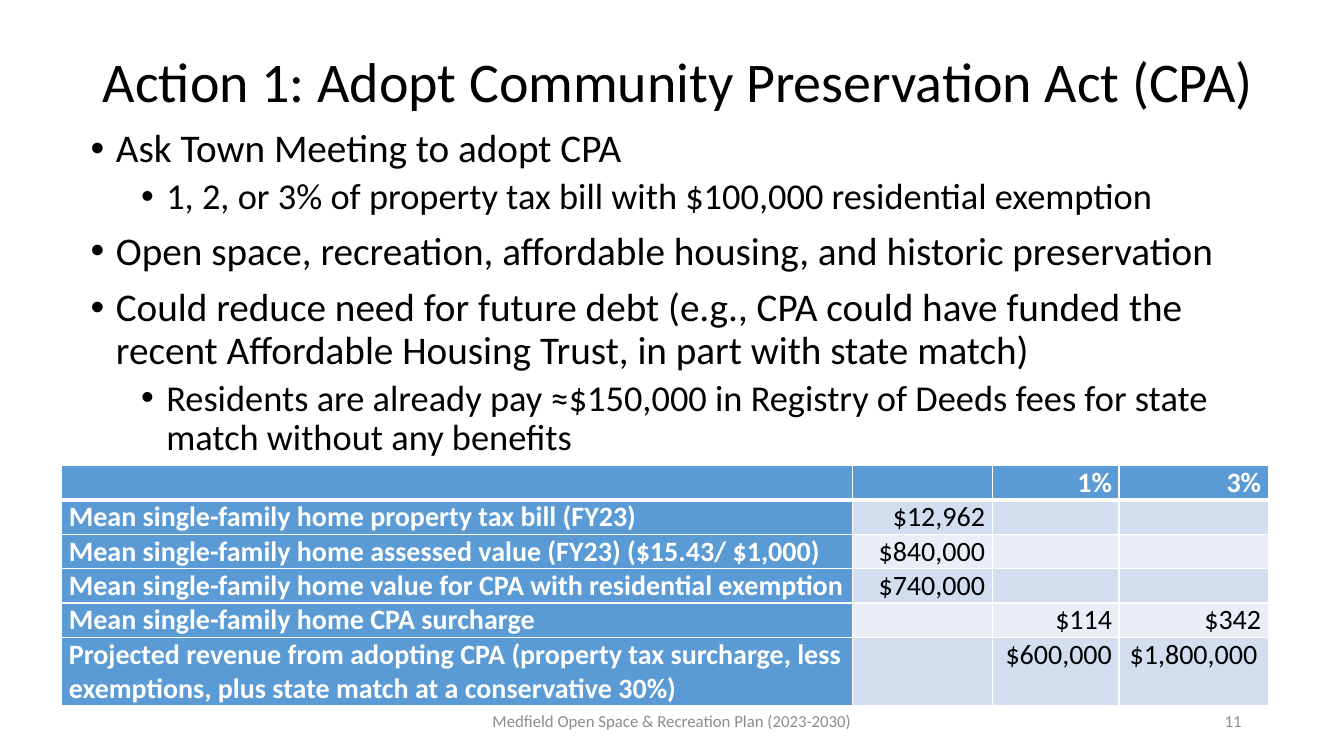
"""Build the slide on adopting the Community Preservation Act."""
from lxml import etree
from pptx import Presentation
from pptx.dml.color import RGBColor
from pptx.enum import text as t
from pptx.oxml import ns
from pptx.util import Pt

BLACK = RGBColor(0x00, 0x00, 0x00)
WHITE = RGBColor(0xFF, 0xFF, 0xFF)
GRAY = RGBColor(0x8C, 0x8C, 0x8C)
BLUE = RGBColor(0x5B, 0x9B, 0xD5)
BANDS = (RGBColor(0xD2, 0xDE, 0xEF), RGBColor(0xEA, 0xEF, 0xF7))

LEFT, MID, RIGHT = t.PP_ALIGN.LEFT, t.PP_ALIGN.CENTER, t.PP_ALIGN.RIGHT

POINTS = (
    (0, "Ask Town Meeting to adopt CPA"),
    (1, "1, 2, or 3% of property tax bill with $100,000 residential exemption"),
    (0, "Open space, recreation, affordable housing, and historic preservation"),
    (0, "Could reduce need for future debt (e.g., CPA could have funded the "
        "recent Affordable Housing Trust, in part with state match)"),
    (1, "Residents are already pay ≈$150,000 in Registry of Deeds fees for state "
        "match without any benefits"),
)
COSTS = (
    ("", "", "1%", "3%"),
    ("Mean single-family home property tax bill (FY23)", "$12,962", "", ""),
    ("Mean single-family home assessed value (FY23) ($15.43/ $1,000)", "$840,000", "", ""),
    ("Mean single-family home value for CPA with residential exemption", "$740,000", "", ""),
    ("Mean single-family home CPA surcharge", "", "$114", "$342"),
    ("Projected revenue from adopting CPA (property tax surcharge, less "
     "exemptions, plus state match at a conservative 30%)", "", "$600,000", "$1,800,000"),
)
WIDTHS = (564.5, 100, 90.7, 106.5)
HEIGHTS = (24,) * 5 + (48,)


def write(para, words, size=20, color=BLACK, bold=False, align=LEFT, line=None, before=0):
    """Fill a paragraph with one formatted run."""
    para.alignment = align
    para.space_before = Pt(before)
    if line:
        para.line_spacing = line
    run = para.add_run()
    run.text = words
    run.font.name = "Calibri"
    run.font.size = Pt(size)
    run.font.bold = bold
    run.font.color.rgb = color


def place(shape, left, top, width, height):
    """Move and size a shape, in points."""
    shape.left, shape.top = Pt(left), Pt(top)
    shape.width, shape.height = Pt(width), Pt(height)


def frame(shape, anchor):
    """Set up and return a shape's text frame."""
    body = shape.text_frame
    body.word_wrap = True
    body.auto_size = t.MSO_AUTO_SIZE.NONE
    body.vertical_anchor = anchor
    return body


def bullet(para, level):
    """Give a paragraph a round bullet and a hanging indent."""
    para.level = level
    props = para._p.get_or_add_pPr()
    props.set("marL", str(Pt(18 + 36 * level)))
    props.set("indent", str(Pt(-18)))
    font = etree.SubElement(props, ns.qn("a:buFont"))
    font.set("typeface", "Arial")
    etree.SubElement(props, ns.qn("a:buChar")).set("char", "•")


def head(slide):
    """Format the title."""
    place(slide.shapes.title, 66.24, 24.48, 864.72, 72)
    body = frame(slide.shapes.title, t.MSO_ANCHOR.MIDDLE)
    write(body.paragraphs[0], "Action 1: Adopt Community Preservation Act (CPA)",
          size=40, line=0.9)


def points(slide):
    """Fill the list."""
    shape = slide.placeholders[1]
    place(shape, 57.6, 88.56, 844.56, 352.8)
    body = frame(shape, t.MSO_ANCHOR.TOP)
    for num, (level, words) in enumerate(POINTS):
        para = body.add_paragraph() if num else body.paragraphs[0]
        write(para, words, size=28 - 2 * level, line=0.9, before=10 - 5 * level)
        bullet(para, level)


def foot(slide, words, left, width, align):
    """Add a gray line at the foot of the slide."""
    box = slide.shapes.add_textbox(Pt(left), Pt(500.4), Pt(width), Pt(28.8))
    body = frame(box, t.MSO_ANCHOR.MIDDLE)
    write(body.paragraphs[0], words, size=12, color=GRAY, align=align)


def border(cell, base):
    """Draw white cell borders, with the given width below."""
    props = cell._tc.get_or_add_tcPr()
    for num, (side, width) in enumerate(zip("LRTB", (1, 1, 1, base))):
        line = etree.Element(ns.qn(f"a:ln{side}"), w=str(Pt(width)))
        fill = etree.SubElement(line, ns.qn("a:solidFill"))
        etree.SubElement(fill, ns.qn("a:srgbClr")).set("val", str(WHITE))
        props.insert(num, line)


def costs(slide):
    """Add the table of costs."""
    table = slide.shapes.add_table(len(COSTS), len(WIDTHS), Pt(44.2), Pt(332.64),
                                   Pt(sum(WIDTHS)), Pt(sum(HEIGHTS))).table
    table.first_col = True
    for col, width in zip(table.columns, WIDTHS):
        col.width = Pt(width)
    for r, (row, height) in enumerate(zip(COSTS, HEIGHTS)):
        table.rows[r].height = Pt(height)
        for c, words in enumerate(row):
            cell = table.cell(r, c)
            label = r == 0 or c == 0
            cell.margin_left = cell.margin_right = Pt(5)
            cell.margin_top = cell.margin_bottom = Pt(0)
            cell.fill.solid()
            cell.fill.fore_color.rgb = BLUE if label else BANDS[(r - 1) % 2]
            border(cell, 1 if r else 3)
            if words:
                align = LEFT if c == 0 else MID if words == "$1,800,000" else RIGHT
                write(cell.text_frame.paragraphs[0], words, bold=label, align=align,
                      color=WHITE if label else BLACK, before=0.3)


def main():
    """Build and save the slide."""
    deck = Presentation()
    deck.slide_width, deck.slide_height = Pt(960), Pt(540)
    slide = deck.slides.add_slide(deck.slide_layouts[1])
    head(slide)
    points(slide)
    foot(slide, "Medfield Open Space & Recreation Plan (2023-2030)", 318, 324, MID)
    foot(slide, "11", 678, 216, RIGHT)
    costs(slide)
    deck.save("out.pptx")


if __name__ == "__main__":
    main()
